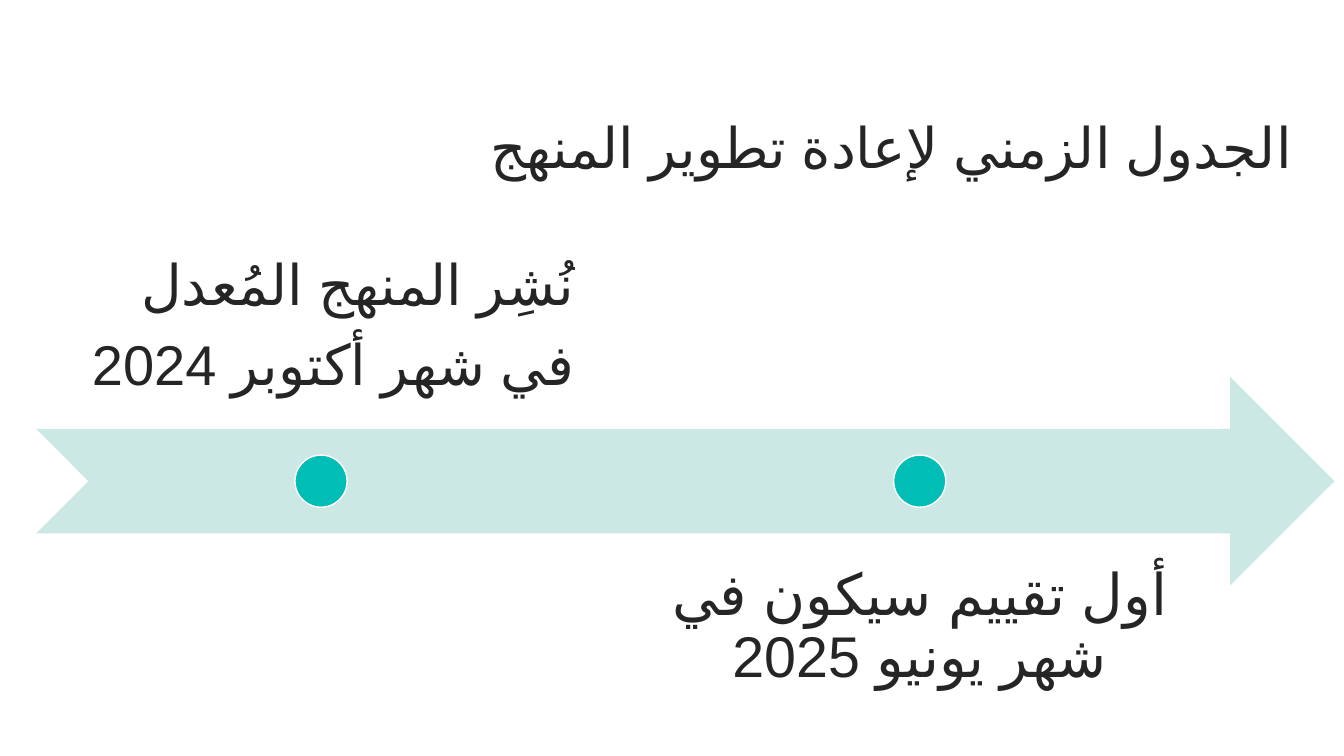
import dataclasses

import lxml.etree
import pptx
import pptx.dml.color
import pptx.enum.shapes
import pptx.enum.text
import pptx.oxml.ns
import pptx.util

Pt = pptx.util.Pt
Shape = pptx.enum.shapes.MSO_SHAPE
Align = pptx.enum.text.PP_ALIGN
Anchor = pptx.enum.text.MSO_ANCHOR


@dataclasses.dataclass(frozen=True)
class Theme:
    text: str = "252525"
    arrow: str = "CCE8E5"
    dot: str = "00BDB6"
    outline: str = "FFFFFF"
    font: str = "Calibri"
    accent_font: str = "Cambria"
    arabic_font: str = "Arial"
    size: float = 40
    large_size: float = 41


THEME = Theme()

# Timeline geometry in points
ARROW_LEFT, ARROW_TOP, ARROW_WIDTH, BAND_HEIGHT = 25.92, 269.2, 927.36, 149.04
LABEL_WIDTH = 406.8
LABEL_SHIFT = 0.75 * BAND_HEIGHT
DOT_SIZE = BAND_HEIGHT / 4


def rgb(value):
    return pptx.dml.color.RGBColor.from_string(value)


def format_run(run, font_name, size):
    run.font.name = font_name
    run.font.size = Pt(size)
    run.font.color.rgb = rgb(THEME.text)
    # Arabic language and complex-script font
    properties = run._r.get_or_add_rPr()
    properties.set("lang", "ar-SA")
    complex_font = lxml.etree.SubElement(properties, pptx.oxml.ns.qn("a:cs"))
    complex_font.set("typeface", THEME.arabic_font)


def add_text(shapes, box, lines, size, align, anchor, inset=None, space_after=0):
    """Add right-to-left text; lines holds (text, font name) pairs."""
    shape = shapes.add_textbox(*map(Pt, box))
    frame = shape.text_frame
    frame.word_wrap = True
    frame.vertical_anchor = anchor
    if inset is not None:
        frame.margin_left = frame.margin_right = Pt(inset)
        frame.margin_top = frame.margin_bottom = Pt(inset)
    frame.text = "\n".join(text for text, _ in lines)
    for paragraph, (_, font_name) in zip(frame.paragraphs, lines):
        paragraph.alignment = align
        paragraph.line_spacing = 0.9
        paragraph.space_after = Pt(space_after)
        paragraph._p.get_or_add_pPr().set("rtl", "1")
        for run in paragraph.runs:
            format_run(run, font_name, size)


def add_filled_shape(shapes, kind, box, fill, outline=None):
    shape = shapes.add_shape(kind, *map(Pt, box))
    shape.shadow.inherit = False
    shape.fill.solid()
    shape.fill.fore_color.rgb = rgb(fill)
    if outline:
        shape.line.color.rgb = rgb(outline)
        shape.line.width = Pt(1)
    else:
        shape.line.fill.background()


def add_milestone(shapes, left, direction, lines, size, align, anchor, inset):
    """Add a label above (-1) or below (1) the arrow and its dot."""
    box = (left, ARROW_TOP + direction * LABEL_SHIFT, LABEL_WIDTH, BAND_HEIGHT)
    add_text(shapes, box, lines, size, align, anchor, inset, 0.35 * size)
    dot_left = left + (LABEL_WIDTH - DOT_SIZE) / 2
    dot_top = ARROW_TOP + (BAND_HEIGHT - DOT_SIZE) / 2
    add_filled_shape(shapes, Shape.OVAL, (dot_left, dot_top, DOT_SIZE, DOT_SIZE),
                     THEME.dot, THEME.outline)


def main():
    presentation = pptx.Presentation()
    presentation.slide_width = Pt(960)
    presentation.slide_height = Pt(540)
    slide = presentation.slides.add_slide(presentation.slide_layouts[6])

    # Title
    add_text(slide.shapes, (14.4, 79.2, 915.84, 56.88),
             [("الجدول الزمني لإعادة تطوير المنهج", THEME.font)],
             THEME.size, Align.RIGHT, Anchor.MIDDLE)

    # Timeline arrow with its two milestones
    timeline = slide.shapes.add_group_shape().shapes
    add_filled_shape(timeline, Shape.NOTCHED_RIGHT_ARROW,
                     (ARROW_LEFT, ARROW_TOP, ARROW_WIDTH, BAND_HEIGHT), THEME.arrow)
    add_milestone(timeline, ARROW_LEFT, -1,
                  [("نُشِر المنهج المُعدل", THEME.accent_font),
                   ("في شهر أكتوبر 2024", THEME.font)],
                  THEME.size, Align.RIGHT, Anchor.BOTTOM, 22.4)
    add_milestone(timeline, 453.6, 1,
                  [("أول تقييم سيكون في شهر يونيو 2025", THEME.font)],
                  THEME.large_size, Align.CENTER, Anchor.TOP, 23)

    presentation.save("out.pptx")


if __name__ == "__main__":
    main()
